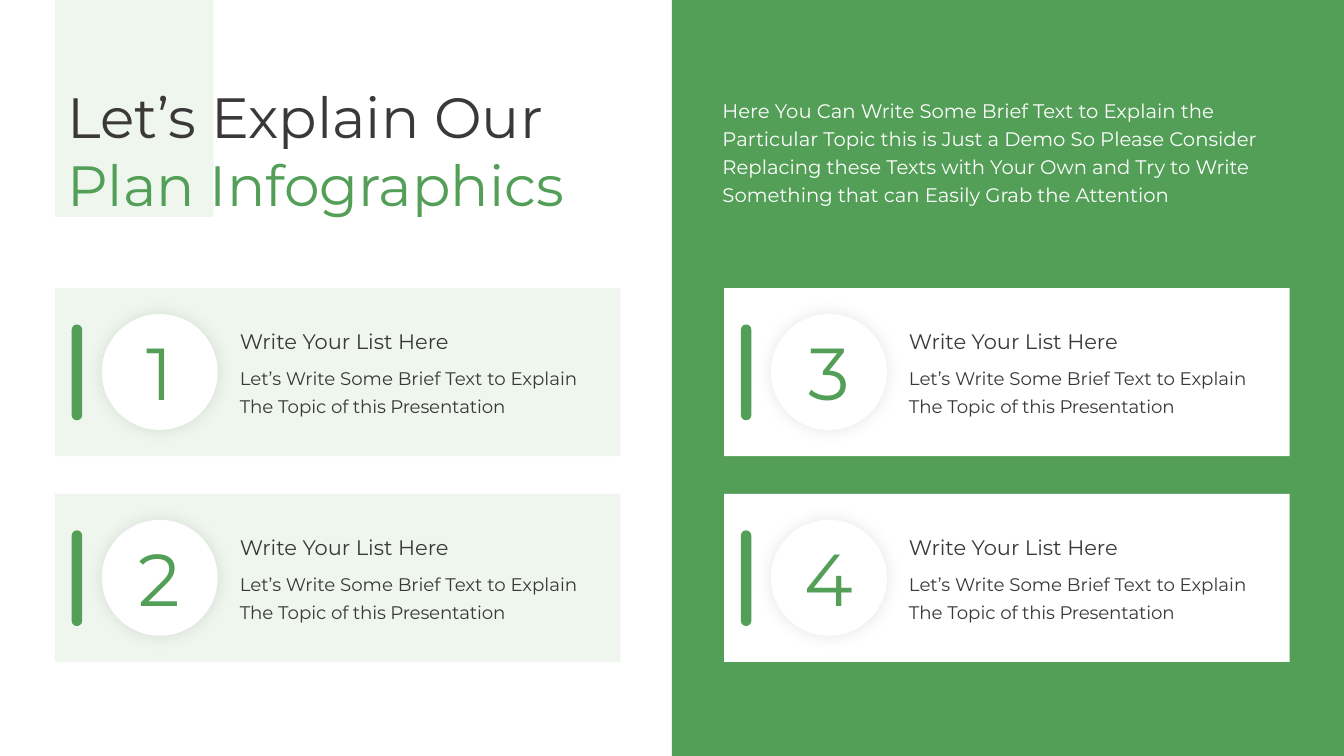
from dataclasses import dataclass
from lxml.etree import SubElement
from pptx import Presentation
from pptx.dml.color import RGBColor as Rgb
from pptx.enum.shapes import MSO_SHAPE as Kind
from pptx.enum.text import PP_ALIGN as Align
from pptx.oxml.ns import qn
from pptx.util import Pt


@dataclass(frozen=True)
class Theme:
    font: str = "Montserrat"
    green: str = "539F57"
    pale: str = "EEF6EE"
    white: str = "FFFFFF"
    dark: str = "3B3838"
    title: float = 40.5
    digit: float = 52.5
    head: float = 15
    intro: float = 14
    body: float = 13
    lead: float = 20


THEME = Theme()
INTRO = [
    "Here You Can Write Some Brief Text to Explain the",
    "Particular Topic this is Just a Demo So Please Consider",
    "Replacing these Texts with Your Own and Try to Write",
    "Something that can Easily Grab the Attention",
]
BODY = ["Let’s Write Some Brief Text to Explain", "The Topic "]
TAIL = "of this Presentation"


def add_shape(slide, kind, box, color):
    shape = slide.shapes.add_shape(kind, *map(Pt, box))
    shape.shadow.inherit = False
    shape.fill.solid()
    shape.fill.fore_color.rgb = Rgb.from_string(color)
    shape.line.fill.background()
    return shape


def add_glow(shape):
    props = shape._element.spPr
    glow = SubElement(props.find(qn("a:effectLst")), qn("a:outerShdw"),
                      blurRad=str(Pt(12)), dist="0", dir="0",
                      algn="ctr", rotWithShape="0")
    color = SubElement(glow, qn("a:srgbClr"), val="000000")
    SubElement(color, qn("a:alpha"), val="10000")


def style(run, size, color):
    run.font.name = THEME.font
    run.font.size = Pt(size)
    run.font.color.rgb = Rgb.from_string(color)


def add_text(slide, box, lines, size, color, align=Align.LEFT):
    frame = slide.shapes.add_textbox(*map(Pt, box)).text_frame
    frame.word_wrap = True
    frame.text = "\n".join(lines)
    for para in frame.paragraphs:
        para.alignment = align
        for run in para.runs:
            style(run, size, color)
    return frame


def add_card(slide, left, top, number, color):
    add_shape(slide, Kind.RECTANGLE, (left, top, 404, 120), color)
    disc = add_shape(slide, Kind.OVAL,
                     (left + 33.5, top + 18.5, 82.8, 82.8), THEME.white)
    add_glow(disc)
    add_text(slide, (left + 33.5, top + 24.5, 82.8, 70.6), [str(number)],
             THEME.digit, THEME.green, Align.CENTER)
    bar = add_shape(slide, Kind.ROUNDED_RECTANGLE,
                    (left + 12, top + 26, 7.5, 68.4), THEME.green)
    bar.adjustments[0] = 0.5
    add_text(slide, (left + 125, top + 25.2, 179, 25.2),
             ["Write Your List Here"], THEME.head, THEME.dark)
    body = add_text(slide, (left + 125, top + 53.3, 262, 41.8),
                    BODY, THEME.body, THEME.dark)
    last = body.paragraphs[-1]
    last.line_spacing = Pt(THEME.lead)
    tail = last.add_run()
    tail.text = TAIL
    style(tail, THEME.body, THEME.dark)
    tail._r.get_or_add_rPr().set("spc", "-10")


def main():
    deck = Presentation()
    deck.slide_width, deck.slide_height = Pt(960), Pt(540)
    slide = deck.slides.add_slide(deck.slide_layouts[6])

    add_shape(slide, Kind.RECTANGLE, (39.2, 0, 113.2, 155), THEME.pale)
    add_shape(slide, Kind.RECTANGLE, (480, 0, 480, 540), THEME.green)

    title = add_text(slide, (41, 54.7, 399, 105),
                     ["Let’s Explain Our", "Plan Infographics"],
                     THEME.title, THEME.dark)
    style(title.paragraphs[1].runs[0], THEME.title, THEME.green)

    intro = add_text(slide, (509, 64, 405, 86.4), INTRO,
                     THEME.intro, THEME.white)
    for para in intro.paragraphs:
        para.line_spacing = Pt(THEME.lead)

    for col, color in enumerate((THEME.pale, THEME.white)):
        for row in range(2):
            add_card(slide, 39.2 + col * 478, 205.8 + row * 147,
                     col * 2 + row + 1, color)

    deck.save("out.pptx")


if __name__ == "__main__":
    main()
